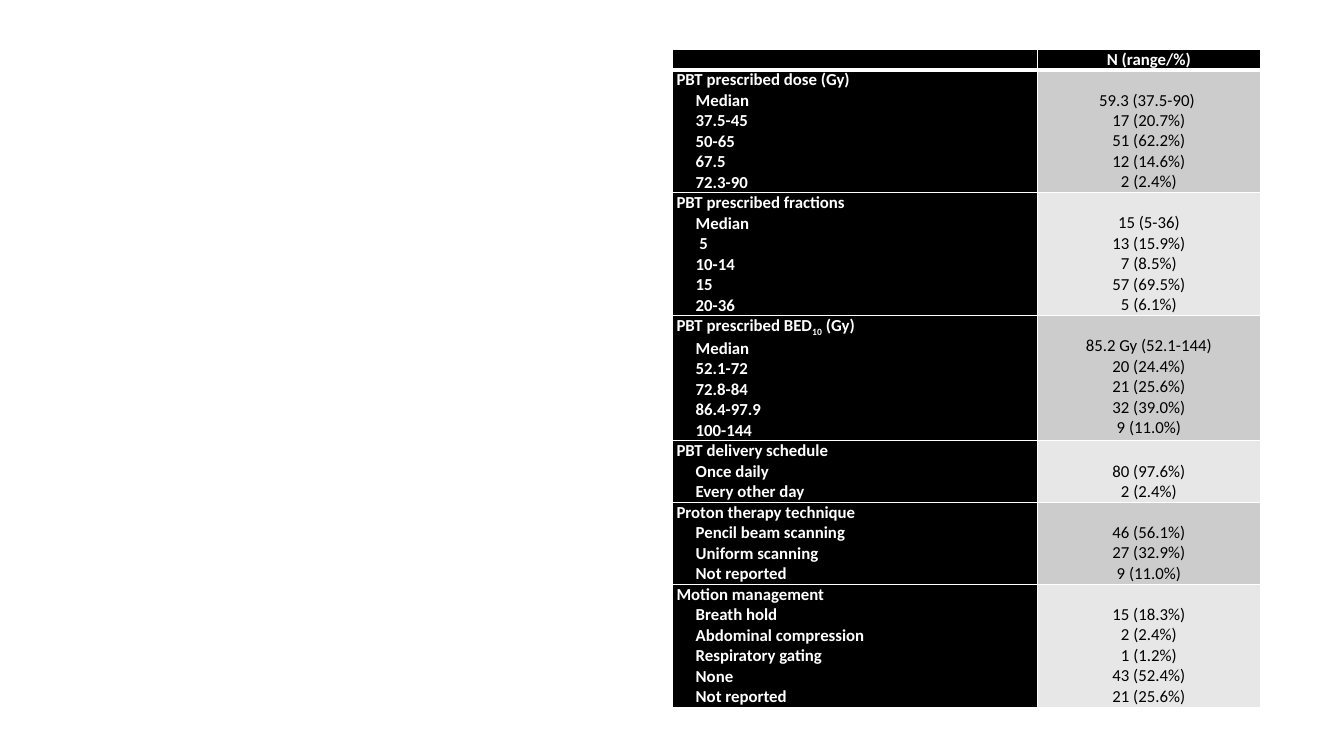
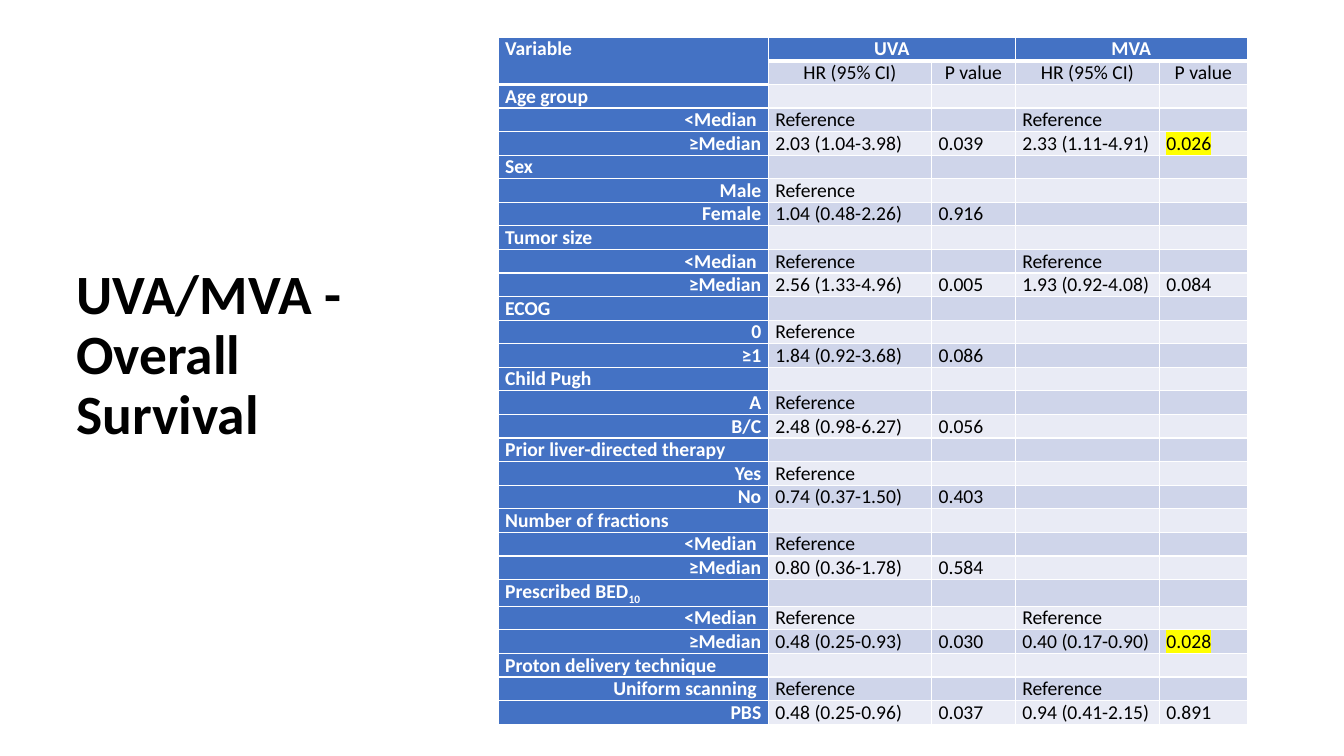
import dataclasses
import typing

import lxml.etree
import pptx
import pptx.dml.color
import pptx.enum.text
import pptx.oxml.ns
import pptx.util

SCALE = 9144
ALIGN = pptx.enum.text.PP_ALIGN
qn = pptx.oxml.ns.qn


@dataclasses.dataclass(frozen=True)
class Theme:
    font: str = "Calibri"
    light: str = "FFFFFF"
    dark: str = "000000"
    mark: str = "FFFF00"
    title: float = 39.6
    thin: float = 1
    thick: float = 3
    sub: int = -25000


@dataclasses.dataclass(frozen=True)
class Look:
    head: str
    bands: tuple[str, str]
    size: int
    inset: int


@dataclasses.dataclass(frozen=True)
class Line:
    text: str
    align: typing.Any = ALIGN.LEFT
    indent: int = 0
    mark: bool = False


@dataclasses.dataclass(frozen=True)
class Cell:
    lines: tuple[Line, ...] = (Line(""),)
    drop: int = 0


@dataclasses.dataclass(frozen=True)
class Grid:
    left: int
    top: int
    cols: tuple[int, ...]
    rows: tuple[int, ...]
    cells: list[list[Cell]]
    look: Look
    heavy: set[tuple[int, int]]
    spans: tuple[tuple[int, int, int, int], ...] = ()


class Group(typing.NamedTuple):
    name: str
    items: tuple[tuple[str, ...], ...]


THEME = Theme()
MONO = Look("000000", ("E7E7E7", "CCCCCC"), 12, 4)
BLUE = Look("4472C4", ("E9EBF5", "CFD5EA"), 14, 7)
STEP = 20
INDENT = 19

DOSES = (
    Group("PBT prescribed dose (Gy)", (
        ("Median", "59.3 (37.5-90) "), ("37.5-45", "17 (20.7%)"),
        ("50-65", "51 (62.2%)"), ("67.5", "12 (14.6%)"),
        ("72.3-90", "2 (2.4%)"))),
    Group("PBT prescribed fractions", (
        ("Median", "15 (5-36)"), (" 5", "13 (15.9%)"),
        ("10-14", "7 (8.5%)"), ("15", "57 (69.5%)"),
        ("20-36", "5 (6.1%)"))),
    Group("PBT prescribed BED_10_ (Gy)", (
        ("Median", "85.2 Gy (52.1-144)"), ("52.1-72", "20 (24.4%)"),
        ("72.8-84", "21 (25.6%)"), ("86.4-97.9", "32 (39.0%)"),
        ("100-144", "9 (11.0%)"))),
    Group("PBT delivery schedule", (
        ("Once daily", "80 (97.6%)"), ("Every other day", "2 (2.4%)"))),
    Group("Proton therapy technique", (
        ("Pencil beam scanning", "46 (56.1%)"),
        ("Uniform scanning", "27 (32.9%)"),
        ("Not reported", "9 (11.0%)"))),
    Group("Motion management", (
        ("Breath hold", "15 (18.3%)"), ("Abdominal compression", "2 (2.4%)"),
        ("Respiratory gating", "1 (1.2%)"), ("None", "43 (52.4%)"),
        ("Not reported", "21 (25.6%)"))),
)

REF = "Reference"
LOW = ("<Median ", REF)
BOTH = ("<Median ", REF, "", REF)
RISKS = (
    Group("Age group", (
        BOTH, ("≥Median", "2.03 (1.04-3.98)", "0.039",
               "2.33 (1.11-4.91)", "0.026"))),
    Group("Sex", (("Male", REF), ("Female", "1.04 (0.48-2.26)", "0.916"))),
    Group("Tumor size", (
        BOTH, ("≥Median", "2.56 (1.33-4.96)", "0.005",
               "1.93 (0.92-4.08)", "0.084"))),
    Group("ECOG", (("0", REF), ("≥1", "1.84 (0.92-3.68)", "0.086"))),
    Group("Child Pugh", (("A", REF), ("B/C", "2.48 (0.98-6.27)", "0.056"))),
    Group("Prior liver-directed therapy", (
        ("Yes", REF), ("No", "0.74 (0.37-1.50)", "0.403"))),
    Group("Number of fractions", (
        LOW, ("≥Median", "0.80 (0.36-1.78)", "0.584"))),
    Group("Prescribed BED_10_", (
        BOTH, ("≥Median", "0.48 (0.25-0.93)", "0.030",
               "0.40 (0.17-0.90)", "0.028"))),
    Group("Proton delivery technique", (
        ("Uniform scanning ", REF, "", REF),
        ("PBS", "0.48 (0.25-0.96)", "0.037", "0.94 (0.41-2.15)", "0.891"))),
)
MARKED = {"0.026", "0.028"}


def px(count: int) -> pptx.util.Emu:
    return pptx.util.Emu(count * SCALE)


def rgb(color: str) -> pptx.dml.color.RGBColor:
    return pptx.dml.color.RGBColor.from_string(color)


def style(para: typing.Any, size: float, color: str, bold: bool) -> None:
    font = para.font
    font.name = THEME.font
    font.size = pptx.util.Pt(size)
    font.bold = bold
    font.color.rgb = rgb(color)


def write(para: typing.Any, line: Line, size: int, color: str,
          bold: bool) -> None:
    para.alignment = line.align
    if line.indent:
        props = para._p.get_or_add_pPr()
        props.set("marL", str(px(line.indent)))
        props.set("indent", "0")
    style(para, size, color, bold)
    if not line.text:
        lxml.etree.SubElement(para._p, qn("a:endParaRPr"), sz=str(size * 100))
        return
    for order, part in enumerate(line.text.split("_")):
        if not part:
            continue
        run = para.add_run()
        run.text = part
        if order % 2:
            run._r.get_or_add_rPr().set("baseline", str(THEME.sub))
        if line.mark:
            light = lxml.etree.SubElement(
                run._r.get_or_add_rPr(), qn("a:highlight"))
            lxml.etree.SubElement(light, qn("a:srgbClr"), val=THEME.mark)


def edge(cell: typing.Any, top: float, bottom: float) -> None:
    props = cell._tc.get_or_add_tcPr()
    sides = {"L": THEME.thin, "R": THEME.thin, "T": top, "B": bottom}
    for side, width in sides.items():
        rule = lxml.etree.SubElement(
            props, qn("a:ln" + side), w=str(pptx.util.Pt(width)))
        fill = lxml.etree.SubElement(rule, qn("a:solidFill"))
        lxml.etree.SubElement(fill, qn("a:srgbClr"), val=THEME.light)


def draw(slide: typing.Any, grid: Grid) -> None:
    look = grid.look
    table = slide.shapes.add_table(
        len(grid.rows), len(grid.cols), px(grid.left), px(grid.top),
        px(sum(grid.cols)), px(sum(grid.rows))).table
    table.first_row = False
    table.horz_banding = False
    for col, width in zip(table.columns, grid.cols):
        col.width = px(width)
    for row, height in zip(table.rows, grid.rows):
        row.height = px(height)

    def weight(row: int, col: int) -> float:
        return THEME.thick if (row, col) in grid.heavy else THEME.thin

    for y, row in enumerate(grid.cells):
        for x, item in enumerate(row):
            cell = table.cell(y, x)
            head = y == 0 or x == 0
            cell.margin_left = cell.margin_right = px(look.inset)
            cell.margin_top = px(item.drop)
            cell.margin_bottom = 0
            edge(cell, weight(y - 1, x), weight(y, x))
            cell.fill.solid()
            cell.fill.fore_color.rgb = rgb(
                look.head if head else look.bands[y % 2])
            frame = cell.text_frame
            for order, line in enumerate(item.lines):
                para = frame.add_paragraph() if order else frame.paragraphs[0]
                write(para, line, look.size,
                      THEME.light if head else THEME.dark, head)
    for y, x, down, over in grid.spans:
        table.cell(y, x).merge(table.cell(y + down - 1, x + over - 1))


def one(text: str, align: typing.Any = ALIGN.LEFT) -> Cell:
    return Cell((Line(text, align, mark=text in MARKED),))


def dose(slide: typing.Any) -> None:
    cells = [[Cell(), one("N (range/%)", ALIGN.CENTER)]]
    rows = [STEP]
    for group in DOSES:
        names = tuple(Line(name, indent=INDENT) for name, _ in group.items)
        counts = tuple(Line(count, ALIGN.CENTER) for _, count in group.items)
        cells.append([Cell((Line(group.name),) + names), Cell(counts, STEP)])
        rows.append(STEP * (len(names) + 1))
    draw(slide, Grid(667, 49, (362, 221), tuple(rows), cells, MONO,
                     {(0, 0), (0, 1)}))


def risk(slide: typing.Any) -> None:
    box = slide.shapes.add_textbox(px(66), px(281), px(364), px(145))
    frame = box.text_frame
    frame.word_wrap = True
    frame.vertical_anchor = pptx.enum.text.MSO_ANCHOR.MIDDLE
    para = frame.paragraphs[0]
    para.text = "UVA/MVA - Overall Survival"
    para.line_spacing = 0.9
    style(para, THEME.title, THEME.dark, True)

    cols = (268, 162, 83, 143, 87)
    heads = (("Variable", "UVA", "", "MVA", ""),
             ("",) + ("HR (95% CI)", "P value") * 2)
    cells = [[one(text, ALIGN.CENTER if x else ALIGN.LEFT)
              for x, text in enumerate(row)] for row in heads]
    for group in RISKS:
        cells.append([one(group.name)] + [Cell()] * (len(cols) - 1))
        for name, *values in group.items:
            blank = [""] * (len(cols) - 1 - len(values))
            cells.append([one(name, ALIGN.RIGHT)]
                         + [one(text) for text in values + blank])
    heavy = {(0, x) for x in range(len(cols))} | {(1, 0)}
    draw(slide, Grid(494, 37, cols, (23,) * len(cells), cells, BLUE, heavy,
                     ((0, 0, 2, 1), (0, 1, 1, 2), (0, 3, 1, 2))))


def main() -> None:
    deck = pptx.Presentation()
    deck.slide_width = px(1333)
    deck.slide_height = px(750)
    for build in (dose, risk):
        build(deck.slides.add_slide(deck.slide_layouts[6]))
    deck.save("out.pptx")


if __name__ == "__main__":
    main()
